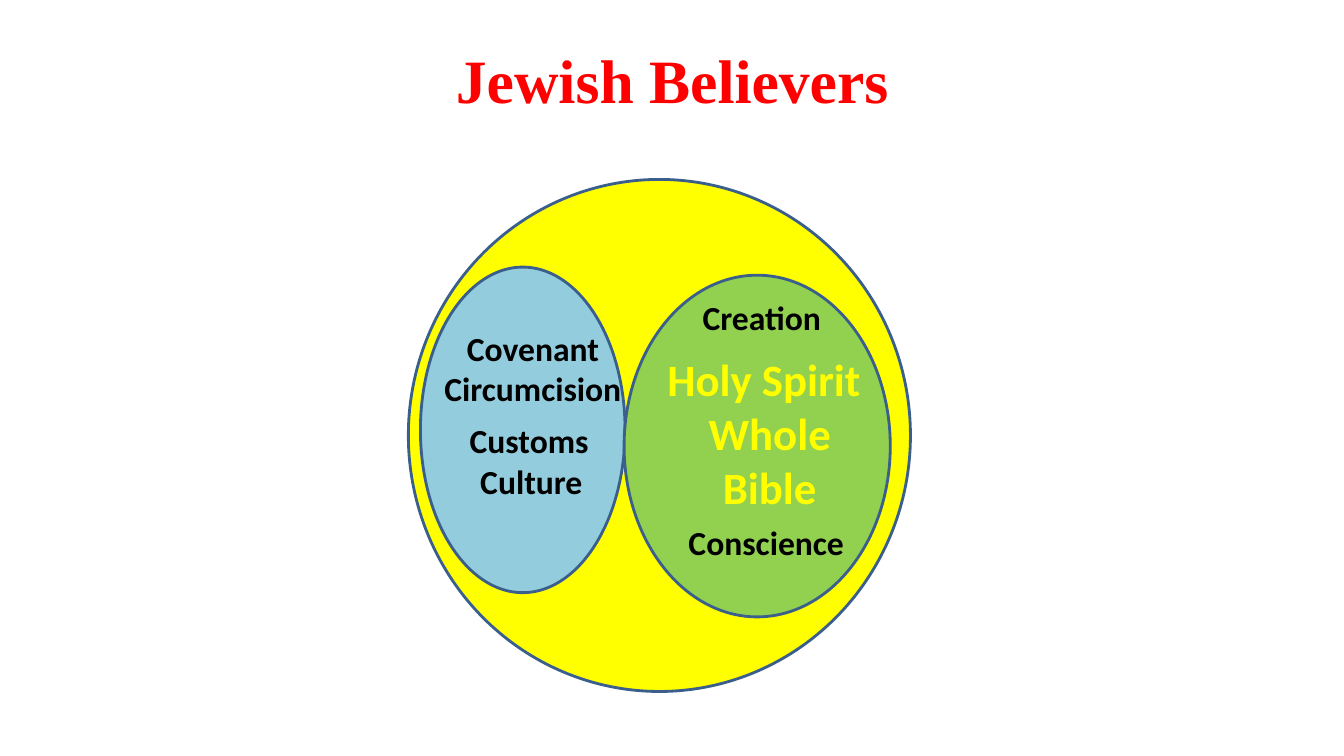
from dataclasses import dataclass

from pptx import Presentation
from pptx.dml.color import RGBColor
from pptx.enum.shapes import MSO_SHAPE
from pptx.enum.text import MSO_ANCHOR, PP_ALIGN
from pptx.slide import Slide
from pptx.text.text import TextFrame
from pptx.util import Inches, Pt

OVAL = MSO_SHAPE.OVAL
LEFT, CENTER = PP_ALIGN.LEFT, PP_ALIGN.CENTER
TOP, MIDDLE = MSO_ANCHOR.TOP, MSO_ANCHOR.MIDDLE
COLORS = {
    "red": "FF0000",
    "yellow": "FFFF00",
    "blue": "93CDDD",
    "green": "92D050",
    "edge": "3A5F8C",
    "black": "000000",
}
Box = tuple[float, float, float, float]


@dataclass
class Ring:
    box: Box
    fill: str


@dataclass
class Label:
    box: Box
    lines: list[tuple[str, PP_ALIGN]]
    size: int = 24
    color: str = "black"
    font: str = "Calibri"
    anchor: MSO_ANCHOR = TOP


TITLE = Label((1.67, 0.36, 10, 0.84), [("Jewish Believers", CENTER)],
              44, "red", "Times New Roman", MIDDLE)
RINGS = [
    Ring((4.05, 1.78, 4.98, 5.08), "yellow"),
    Ring((4.17, 2.65, 2.03, 3.23), "blue"),
    Ring((6.19, 2.73, 2.64, 3.39), "green"),
]
LABELS = [
    Label((4.24, 3.2, 2.09, 0.91), [("Covenant", CENTER), ("Circumcision", CENTER)]),
    Label((4.56, 4.12, 1.42, 0.91), [("Customs", LEFT), ("Culture", CENTER)]),
    Label((6.87, 2.9, 1.5, 0.51), [("Creation", LEFT)]),
    Label((6.73, 5.13, 1.79, 0.51), [("Conscience", LEFT)]),
    Label((6.52, 3.44, 2.23, 1.72), [("Holy Spirit", LEFT), ("Whole Bible", CENTER)],
          32, "yellow"),
]


def color(name: str) -> RGBColor:
    return RGBColor.from_string(COLORS[name])


def write(frame: TextFrame, label: Label) -> None:
    frame.word_wrap = True
    frame.vertical_anchor = label.anchor
    for i, (text, align) in enumerate(label.lines):
        para = frame.add_paragraph() if i else frame.paragraphs[0]
        para.alignment = align
        run = para.add_run()
        run.text = text
        run.font.name = label.font
        run.font.size = Pt(label.size)
        run.font.bold = True
        run.font.color.rgb = color(label.color)


def add_title(slide: Slide, label: Label) -> None:
    title = slide.shapes.title
    title.left, title.top, title.width, title.height = map(Inches, label.box)
    write(title.text_frame, label)


def add_ring(slide: Slide, ring: Ring) -> None:
    oval = slide.shapes.add_shape(OVAL, *map(Inches, ring.box))
    oval.shadow.inherit = False
    oval.fill.solid()
    oval.fill.fore_color.rgb = color(ring.fill)
    oval.line.color.rgb = color("edge")
    oval.line.width = Pt(2)


def add_label(slide: Slide, label: Label) -> None:
    box = slide.shapes.add_textbox(*map(Inches, label.box))
    write(box.text_frame, label)


def main() -> None:
    deck = Presentation()
    deck.slide_width, deck.slide_height = Inches(13.33), Inches(7.5)
    slide = deck.slides.add_slide(deck.slide_layouts.get_by_name("Title Only"))
    add_title(slide, TITLE)
    for ring in RINGS:
        add_ring(slide, ring)
    for label in LABELS:
        add_label(slide, label)
    deck.save("out.pptx")


if __name__ == "__main__":
    main()
